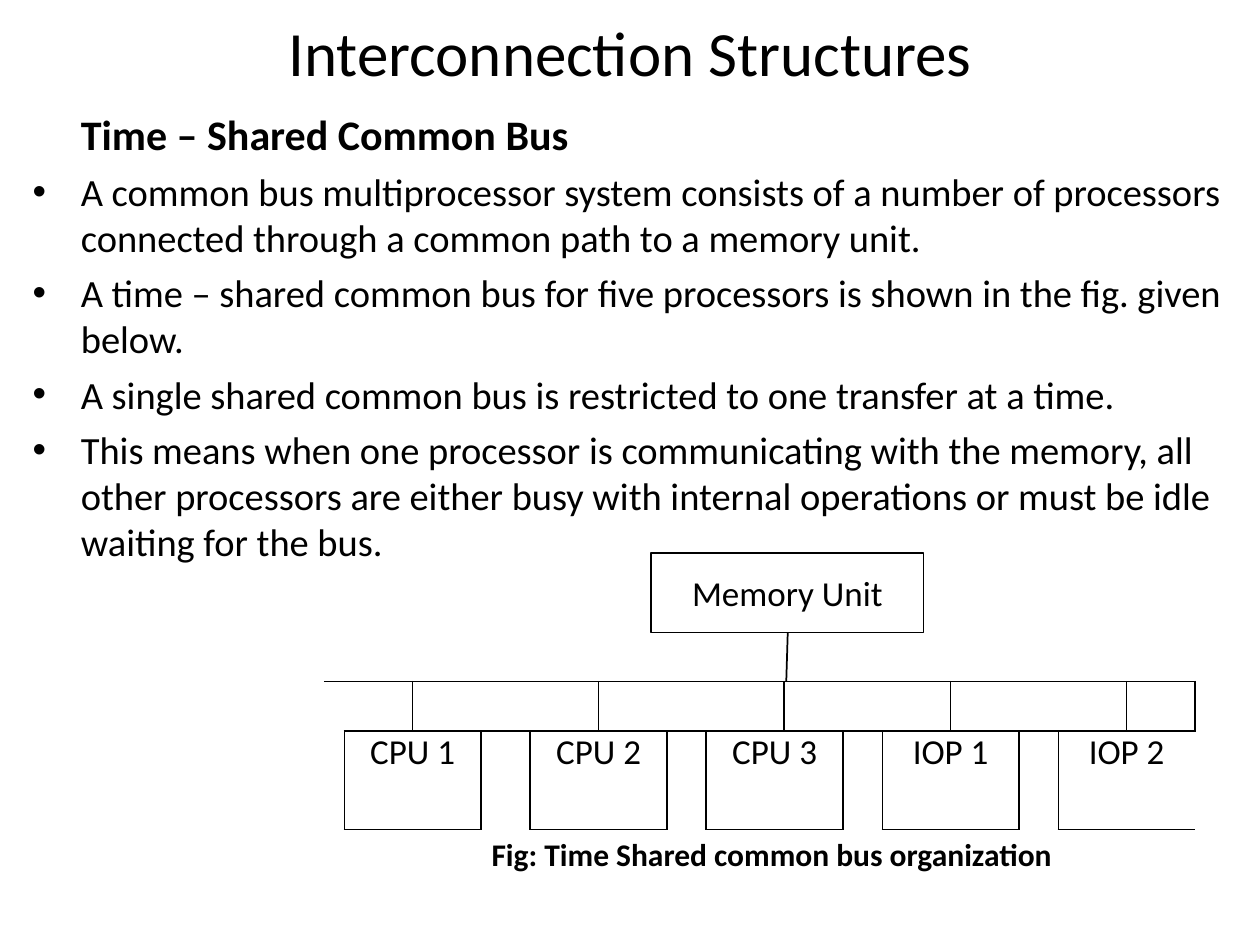
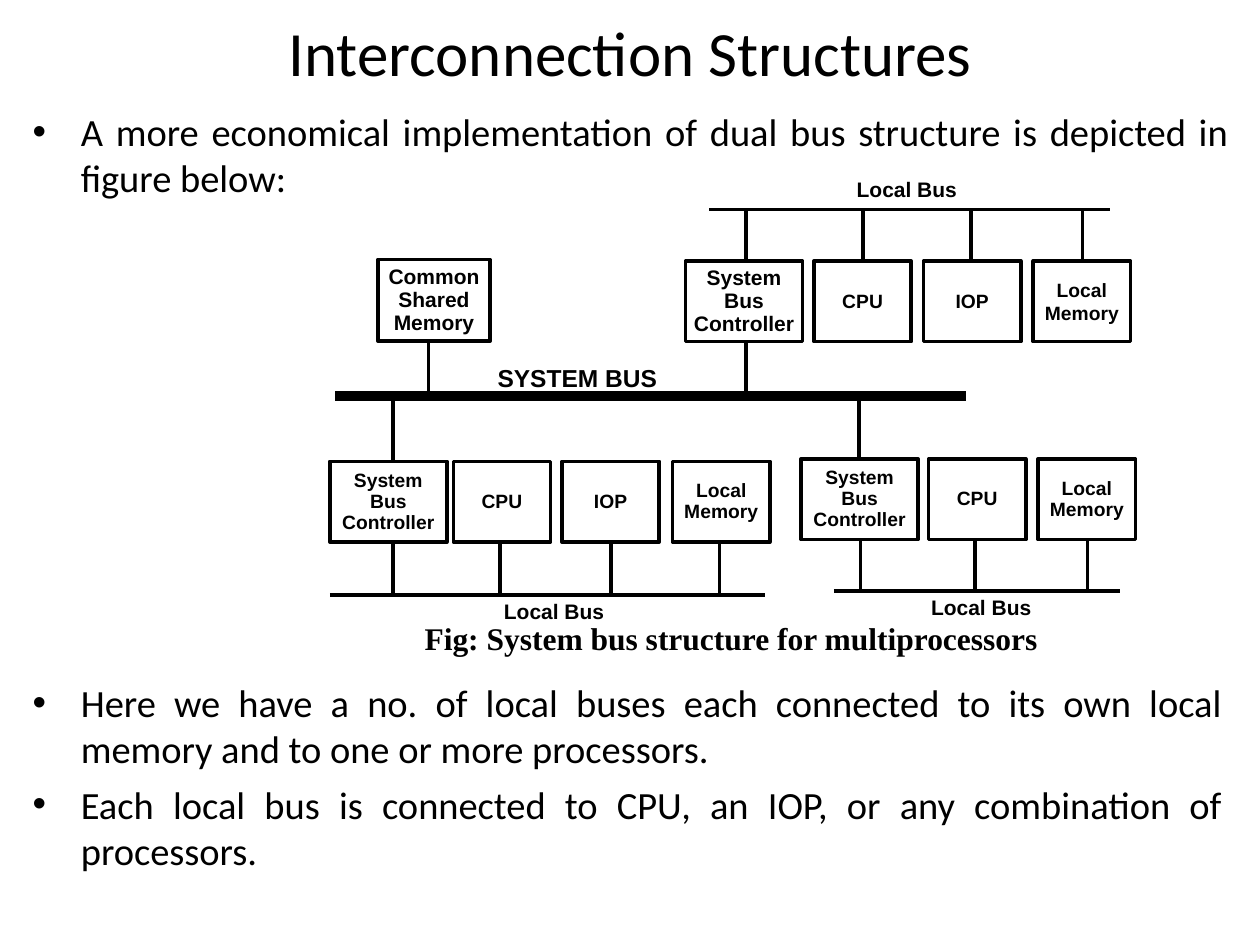
from lxml.etree import SubElement
from pptx import Presentation
from pptx.dml.color import RGBColor
from pptx.enum.shapes import MSO_CONNECTOR, MSO_SHAPE
from pptx.enum.text import MSO_ANCHOR, MSO_AUTO_SIZE, PP_ALIGN
from pptx.oxml.ns import qn
from pptx.util import Cm, Pt

COLORS = {"ink": "000000", "paper": "FFFFFF"}
TITLE = "Interconnection Structures"
NO_GRID_STYLE = "{2D5ABB26-0587-4C30-8999-92F81FD0307C}"


class Deck:
    """Holds the shared style and the slide being drawn."""

    def __init__(self):
        self.prs = Presentation()
        self.prs.slide_width, self.prs.slide_height = Cm(25.4), Cm(19.05)
        self.ink = RGBColor.from_string(COLORS["ink"])
        self.slide = None

    def new_slide(self, layout):
        self.slide = self.prs.slides.add_slide(self.prs.slide_layouts[layout])
        fill = self.slide.background.fill
        fill.solid()
        fill.fore_color.rgb = RGBColor.from_string(COLORS["paper"])
        sp = self.slide.shapes.title
        self.place(sp, 3.94, 0.28, 17.53, 1.52)
        sp.text_frame.text = TITLE
        self.format(sp.text_frame, 36, align=PP_ALIGN.CENTER)

    def place(self, sp, x, y, w, h):
        sp.left, sp.top, sp.width, sp.height = Cm(x), Cm(y), Cm(w), Cm(h)
        self.frame(sp.text_frame)

    def frame(self, tf, anchor=MSO_ANCHOR.TOP):
        tf.margin_left = tf.margin_right = tf.margin_top = tf.margin_bottom = 0
        tf.word_wrap = True
        tf.auto_size = MSO_AUTO_SIZE.NONE
        tf.vertical_anchor = anchor

    def format(self, tf, size, font="Calibri", bold=False, align=PP_ALIGN.LEFT,
               spacing=None):
        for p in tf.paragraphs:
            p.alignment = align
            if spacing:
                p.line_spacing = Pt(spacing)
            for r in p.runs:
                r.font.name, r.font.size, r.font.bold = font, Pt(size), bold
                r.font.color.rgb = self.ink

    def bullets(self, idx, items, x, y, w, h, align=PP_ALIGN.LEFT, heading=None):
        sp = self.slide.placeholders[idx]
        self.place(sp, x, y, w, h)
        tf = sp.text_frame
        tf.text = "\n".join(([heading] if heading else []) + items)
        for i, p in enumerate(tf.paragraphs):
            is_heading = heading and i == 0
            pPr = p._p.get_or_add_pPr()
            pPr.set("marL", str(Cm(0.99)))
            pPr.set("indent", str(0 if is_heading else -Cm(0.97)))
            if is_heading:
                SubElement(pPr, qn("a:buNone"))
            else:
                SubElement(pPr, qn("a:buChar")).set("char", "•")
            p.space_before = Pt(5.2 if i else 0)
        self.format(tf, 22, align=align)
        if heading:
            r = tf.paragraphs[0].runs[0]
            r.font.size, r.font.bold = Pt(24), True

    def label(self, text, x, y, w, h, size, font="Calibri"):
        sp = self.slide.shapes.add_textbox(Cm(x), Cm(y), Cm(w), Cm(h))
        self.frame(sp.text_frame)
        sp.text_frame.text = text
        self.format(sp.text_frame, size, font, bold=True)

    def box(self, text, x, y, w, h, size, font="Arial", bold=True, weight=2,
            spacing=None):
        sp = self.slide.shapes.add_shape(MSO_SHAPE.RECTANGLE,
                                         Cm(x), Cm(y), Cm(w), Cm(h))
        sp.shadow.inherit = False
        sp.fill.background()
        sp.line.color.rgb, sp.line.width = self.ink, Pt(weight)
        self.frame(sp.text_frame, MSO_ANCHOR.MIDDLE)
        sp.text_frame.text = text
        self.format(sp.text_frame, size, font, bold, PP_ALIGN.CENTER, spacing)

    def line(self, x1, y1, x2, y2, weight=2):
        c = self.slide.shapes.add_connector(MSO_CONNECTOR.STRAIGHT,
                                            Cm(x1), Cm(y1), Cm(x2), Cm(y2))
        c.line.color.rgb, c.line.width = self.ink, Pt(weight)
        SubElement(c._element.spPr, qn("a:effectLst"))

    def table(self, x, y, widths, heights):
        tbl = self.slide.shapes.add_table(
            len(heights), len(widths), Cm(x), Cm(y),
            Cm(sum(widths)), Cm(sum(heights))).table
        tbl.first_row = tbl.horz_banding = False
        tbl._tbl.tblPr.find(qn("a:tableStyleId")).text = NO_GRID_STYLE
        for col, w in zip(tbl.columns, widths):
            col.width = Cm(w)
        for row, h in zip(tbl.rows, heights):
            row.height = Cm(h)
        return tbl

    def cell(self, tbl, row, first, last, edges, text=""):
        """Join columns first to last of a row and rule the given edges."""
        for col in range(first, last + 1):
            cell = tbl.cell(row, col)
            cell.margin_left = cell.margin_right = 0
            cell.margin_top = cell.margin_bottom = 0
            for edge in "LRTB":
                inner = (edge == "L" and col > first) or (edge == "R" and col < last)
                if edge in edges and not inner:
                    ln = SubElement(cell._tc.get_or_add_tcPr(), qn("a:ln" + edge))
                    ln.set("w", str(Pt(1)))
                    fill = SubElement(ln, qn("a:solidFill"))
                    SubElement(fill, qn("a:srgbClr")).set("val", COLORS["ink"])
            cell.fill.background()
        cell = tbl.cell(row, first)
        if last > first:
            cell.merge(tbl.cell(row, last))
        if text:
            cell.text_frame.text = text
            self.format(cell.text_frame, 20, align=PP_ALIGN.CENTER)


def common_bus_slide(d):
    d.new_slide(1)
    d.bullets(1, [
        "A common bus multiprocessor system consists of a number of processors "
        "connected through a common path to a memory unit.",
        "A time – shared common bus for five processors is shown in the fig. "
        "given below.",
        "A single shared common bus is restricted to one transfer at a time.",
        "This means when one processor is communicating with the memory, all "
        "other processors are either busy with internal operations or must be "
        "idle waiting for the bus.",
    ], 0.64, 2.18, 24.38, 9.3, heading="Time – Shared Common Bus")

    # Memory above the bus
    d.box("Memory Unit", 13.13, 11.15, 5.49, 1.6, 20, "Calibri", False, 1)
    d.line(15.88, 12.75, 15.85, 13.74, 1)

    # Bus, drops and processors: each processor is two columns, split at its drop
    units = ["CPU 1", "CPU 2", "CPU 3", "IOP 1", "IOP 2"]
    gaps = [0.41, 0.99, 0.79, 0.79, 0.79]
    halves = [(1.38, 1.38)] * 2 + [(1.57, 1.19)] + [(1.38, 1.38)] * 2
    widths = [w for gap, half in zip(gaps, halves) for w in (gap, *half)]
    tbl = d.table(6.53, 13.74, widths, [1, 1.98])
    d.cell(tbl, 0, 0, 1, "TR")
    for i, unit in enumerate(units):
        start = 3 * i
        is_last = i == len(units) - 1
        d.cell(tbl, 0, start + 2, start + (2 if is_last else 4),
               "LTB" if is_last else "LTRB")
        d.cell(tbl, 1, start, start, "LTR" if i else "R")
        d.cell(tbl, 1, start + 1, start + 2, "LTRB", unit)
    d.label("Fig: Time Shared common bus organization", 9.91, 16.84, 11.6, 0.84, 18)


def system_bus_slide(d):
    d.new_slide(3)
    d.bullets(1, [
        "A more economical implementation of dual bus structure is depicted in "
        "figure below:",
    ], 0.64, 2.18, 24.13, 1.96, PP_ALIGN.JUSTIFY)
    d.bullets(2, [
        "Here we have a no. of local buses each connected to its own local "
        "memory and to one or more processors.",
        "Each local bus is connected to CPU, an IOP, or any combination of "
        "processors.",
    ], 0.64, 13.69, 24, 4.1, PP_ALIGN.JUSTIFY)

    # System bus and its taps
    bus_y = 7.98
    d.line(6.76, bus_y, 19.48, bus_y, 6)
    d.label("SYSTEM BUS", 10.03, 7.32, 3.6, 0.64, 14, "Arial")
    d.box("Common\vShared\vMemory", 7.62, 5.23, 2.26, 1.65, 12, spacing=13)
    for x, y in [(8.64, 6.88), (15.04, 6.89), (7.92, 9.3), (17.32, 9.25)]:
        d.line(x, y, x, bus_y)

    # Local buses: line, label, module row, then module left edge and stem
    controller, memory = "System\vBus\vController", "Local\vMemory"
    height = 1.63
    local_buses = [
        ((14.3, 22.38, 4.22), (17.27, 3.56), 5.26,
         [(controller, 13.82, 15.04), ("CPU", 16.41, 17.4),
          ("IOP", 18.62, 19.58), (memory, 20.83, 21.82)]),
        ((6.65, 15.42, 11.99), (10.16, 12.07), 9.3,
         [(controller, 6.65, 7.92), ("CPU", 9.14, 10.08),
          ("IOP", 11.33, 12.32), (memory, 13.56, 14.5)]),
        ((16.81, 22.58, 11.91), (18.77, 11.99), 9.25,
         [(controller, 16.15, 17.35), ("CPU", 18.72, 19.66),
          (memory, 20.93, 21.92)]),
    ]
    for (x1, x2, y), (label_x, label_y), top, modules in local_buses:
        d.line(x1, y, x2, y)
        d.label("Local Bus", label_x, label_y, 2.3, 0.53, 12, "Arial")
        is_above = y < top
        for name, left, stem in modules:
            is_controller = name == controller
            d.box(name, left, top, 2.36 if is_controller else 1.96, height,
                  12 if is_controller and is_above else 11,
                  spacing=13 if is_above else 12)
            d.line(stem, top if is_above else top + height, stem, y)
    d.label("Fig: System bus structure for multiprocessors",
            8.56, 12.47, 13, 0.75, 18, "Times New Roman")


def main():
    d = Deck()
    common_bus_slide(d)
    system_bus_slide(d)
    d.prs.save("out.pptx")


if __name__ == "__main__":
    main()
